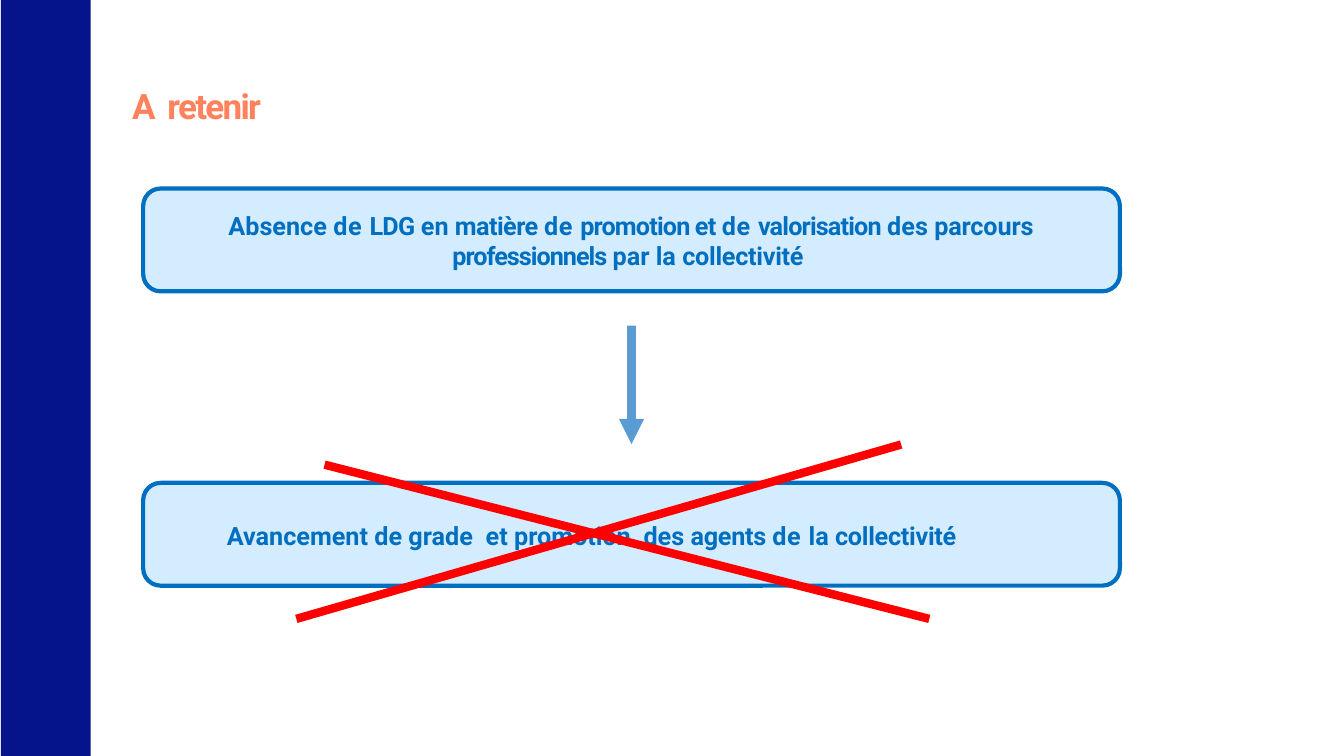
from dataclasses import dataclass

from lxml import etree
from pptx import Presentation
from pptx.dml.color import RGBColor
from pptx.enum.shapes import MSO_CONNECTOR as Link, MSO_SHAPE as Preset
from pptx.enum.text import MSO_ANCHOR as Anchor, PP_ALIGN as Align
from pptx.oxml.ns import qn
from pptx.util import Pt

NAVY = RGBColor(0x06, 0x14, 0x8C)
CORAL = RGBColor(0xFF, 0x82, 0x5C)
BLUE = RGBColor(0x00, 0x6F, 0xC0)
PALE_BLUE = RGBColor(0xD4, 0xEC, 0xFF)
ARROW_BLUE = RGBColor(0x5B, 0x9B, 0xD4)
RED = RGBColor(0xFF, 0x00, 0x00)
FONT = "Roboto"
WIDE_SPACE = 4.5  # tracking that doubles one 18 pt space


@dataclass(frozen=True)
class Area:
    left: float
    top: float
    width: float
    height: float

    def lengths(self) -> tuple:
        return Pt(self.left), Pt(self.top), Pt(self.width), Pt(self.height)


@dataclass(frozen=True)
class Piece:
    text: str
    tracking: float = 0


@dataclass(frozen=True)
class Line:
    pieces: tuple[Piece, ...]
    space_before: float


@dataclass(frozen=True)
class Caption:
    area: Area
    lines: tuple[Line, ...]
    size: float = 18
    color: RGBColor = BLUE
    align: Align = Align.LEFT
    anchor: Anchor = Anchor.TOP
    inset: float = 0.72


@dataclass(frozen=True)
class Block:
    preset: Preset
    area: Area
    fill: RGBColor
    outline: RGBColor | None = None
    adjustments: tuple[float, ...] = ()


@dataclass(frozen=True)
class Stroke:
    start: tuple[float, float]
    end: tuple[float, float]


def statement(top: float) -> Block:
    return Block(Preset.ROUNDED_RECTANGLE, Area(102.24, top, 697.68, 73.44),
                 PALE_BLUE, BLUE, (0.17,))


BLOCKS = (
    Block(Preset.RECTANGLE, Area(0.72, 0, 64.08, 540), NAVY),
    statement(134.64),
    Block(Preset.DOWN_ARROW, Area(442.08, 232.56, 18, 84.6), ARROW_BLUE,
          adjustments=(0.34, 1)),
    statement(344.88),
)

CAPTIONS = (
    Caption(Area(93.6, 28.08, 709.2, 93.6),
            (Line((Piece("A ", 1.1), Piece("retenir", -1.2)), 0),),
            size=25, color=CORAL, anchor=Anchor.MIDDLE),
    Caption(Area(128.16, 149.32, 645.12, 45.36), (
        Line((Piece("Absence "), Piece("de ", 0.5), Piece("LDG ", -0.5),
              Piece("en "), Piece("matière ", -0.4), Piece("de ", 0.5),
              Piece("promotion et ", -0.6), Piece("de ", 0.5),
              Piece("valorisation ", -0.6), Piece("des "),
              Piece("parcours", -0.1)), 0),
        Line((Piece("professionnels ", -0.7), Piece("par la "),
              Piece("collectivité ", -0.2)), 0.1),
    ), align=Align.CENTER, inset=0),
    Caption(Area(161.28, 371.08, 653.76, 23.04), (
        Line((Piece("Avancement de grade"), Piece(" ", WIDE_SPACE),
              Piece("et promotion"), Piece(" ", WIDE_SPACE), Piece("des "),
              Piece("agents ", -0.2), Piece("de ", 0.5), Piece("la "),
              Piece("collectivité", -0.2)), 0),
    )),
)

CROSS = (
    Stroke((231.84, 331.92), (663.84, 442.08)),
    Stroke((643.68, 317.52), (211.68, 442.08)),
)


def draw_block(shapes, block: Block) -> None:
    shape = shapes.add_shape(block.preset, *block.area.lengths())
    shape.shadow.inherit = False
    for index, value in enumerate(block.adjustments):
        shape.adjustments[index] = value
    shape.fill.solid()
    shape.fill.fore_color.rgb = block.fill
    if block.outline is None:
        shape.line.fill.background()
    else:
        shape.line.color.rgb = block.outline
        shape.line.width = Pt(3)


def draw_caption(shapes, caption: Caption) -> None:
    frame = shapes.add_textbox(*caption.area.lengths()).text_frame
    frame.word_wrap = True
    frame.vertical_anchor = caption.anchor
    frame.margin_left = Pt(caption.inset)
    frame.margin_right = frame.margin_bottom = Pt(0)
    frame.margin_top = Pt(0.72)
    for index, line in enumerate(caption.lines):
        paragraph = frame.add_paragraph() if index else frame.paragraphs[0]
        paragraph.alignment = caption.align
        if index:
            paragraph.space_before = Pt(line.space_before)
        for piece in line.pieces:
            run = paragraph.add_run()
            run.text = piece.text
            run.font.name = FONT
            run.font.size = Pt(caption.size)
            run.font.bold = True
            run.font.color.rgb = caption.color
            if piece.tracking:
                run._r.get_or_add_rPr().set("spc", str(round(piece.tracking * 100)))


def draw_stroke(shapes, stroke: Stroke) -> None:
    ends = [Pt(value) for value in stroke.start + stroke.end]
    connector = shapes.add_connector(Link.STRAIGHT, *ends)
    connector.line.color.rgb = RED
    connector.line.width = Pt(6)
    etree.SubElement(connector._element.spPr, qn("a:effectLst"))


def main() -> None:
    deck = Presentation()
    deck.slide_width, deck.slide_height = Pt(960), Pt(540)
    shapes = deck.slides.add_slide(deck.slide_layouts[6]).shapes

    # Side band, statement boxes and arrow
    for block in BLOCKS:
        draw_block(shapes, block)

    # Title and statements
    for caption in CAPTIONS:
        draw_caption(shapes, caption)

    # Red cross over the second statement
    for stroke in CROSS:
        draw_stroke(shapes, stroke)

    deck.save("out.pptx")


if __name__ == "__main__":
    main()
